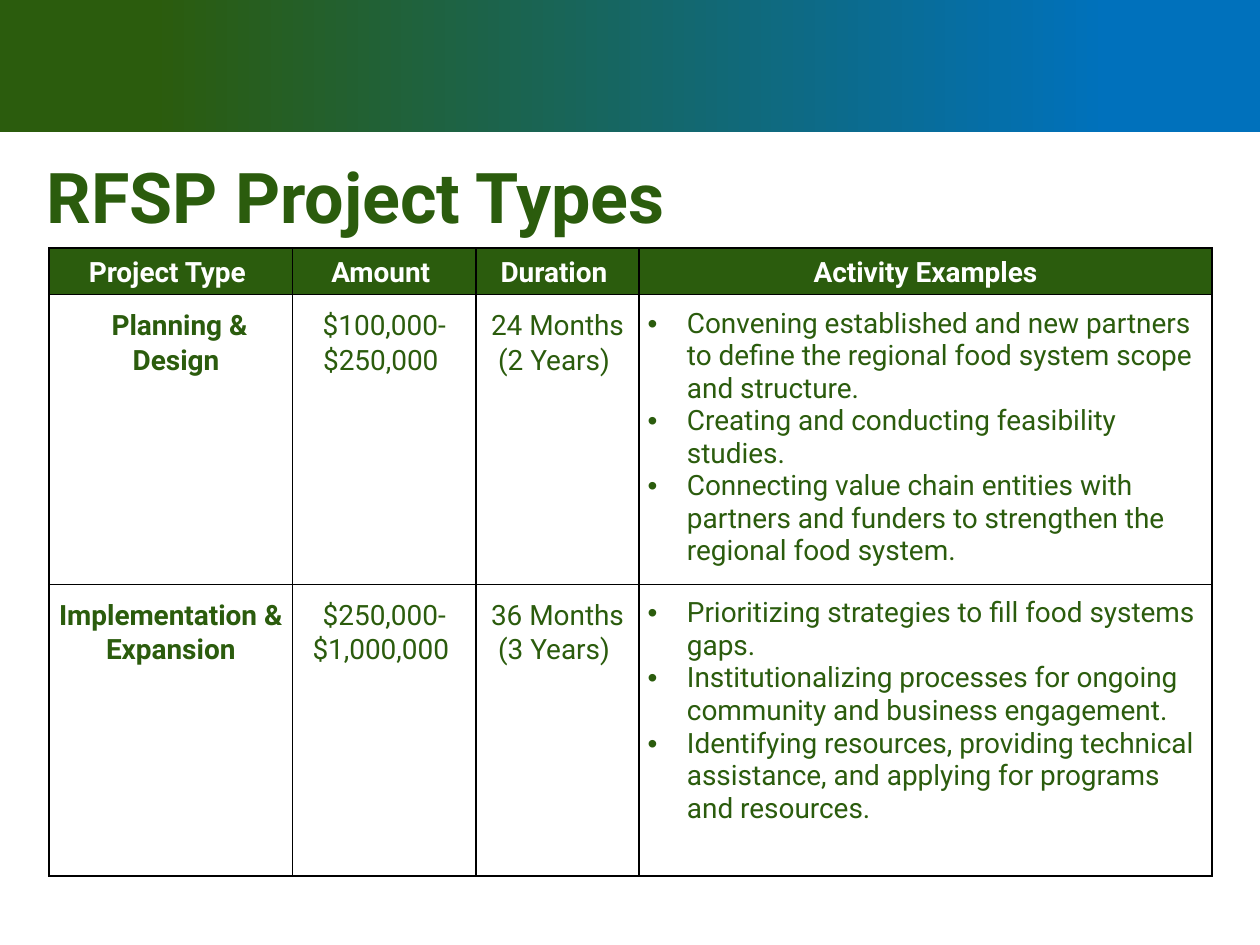
from lxml import etree
from pptx import Presentation
from pptx import util as u
from pptx.dml.color import RGBColor
from pptx.enum import shapes, text
from pptx.oxml.ns import qn

HUES = {"green": "2B5C0D", "blue": "0071BC", "white": "FFFFFF", "black": "000000"}
FACE = "Roboto"
TITLE = "RFSP Project Types"
HEADS = ["Project Type ", "Amount ", "Duration ", "Activity Examples"]
ROWS = [
    ("Planning & Design ", "$100,000-$250,000 ", "24 Months (2 Years) ", [
        "Convening established and new partners to define the regional food "
        "system scope and structure.",
        "Creating and conducting feasibility studies.",
        "Connecting value chain entities with partners and funders to "
        "strengthen the regional food system.",
    ]),
    ("Implementation & Expansion", "$250,000- $1,000,000 ", "36 Months (3 Years) ", [
        "Prioritizing strategies to fill food systems gaps.",
        "Institutionalizing processes for ongoing community and business engagement.",
        "Identifying resources, providing technical assistance, and applying "
        "for programs and resources.",
    ]),
]
WIDTHS = [139, 105, 93, 327.6]
HEIGHTS = [26.6, 165.6, 166.6]
BAND = (0, 0, 720, 75.6)
HEAD_BOX = (19.5, 84.2, 452, 55.4)
GRID = (28.1, 141.8)
HANG = 22.5
HEAD_PAD = dict.fromkeys(("left", "right", "top", "bottom"), 0)
BODY_PAD = {"left": 5, "right": 5, "top": 7.2, "bottom": 0}


def rgb(hue):
    return RGBColor.from_string(HUES[hue])


def style(font, hue, size, bold):
    look = {"name": FACE, "size": u.Pt(size), "bold": bold}
    for key, val in look.items():
        setattr(font, key, val)
    font.color.rgb = rgb(hue)


def edge(cell):
    """Draw a one-point line on all four sides; call before filling the cell."""
    props = cell._tc.get_or_add_tcPr()
    for side in ("lnL", "lnR", "lnT", "lnB"):
        line = etree.SubElement(props, qn("a:" + side), w=str(u.Pt(1)))
        fill = etree.SubElement(line, qn("a:solidFill"))
        etree.SubElement(fill, qn("a:srgbClr"), val=HUES["black"])


def indent(par, left, hang=0):
    props = par._p.get_or_add_pPr()
    props.set("marL", str(u.Pt(left)))
    props.set("indent", str(u.Pt(-hang)))
    return props


def bullet(par):
    props = indent(par, HANG, HANG)
    etree.SubElement(props, qn("a:buFont"), typeface="Arial")
    etree.SubElement(props, qn("a:buChar"), char="•")


def write(cell, body, hue, bold, pad):
    """Fill a cell with centred text, or with bullets when body is a list."""
    listed = isinstance(body, list)
    for side, gap in pad.items():
        setattr(cell, "margin_" + side, u.Pt(gap))
    frame = cell.text_frame
    for i, line in enumerate(body if listed else [body]):
        par = frame.add_paragraph() if i else frame.paragraphs[0]
        if listed:
            bullet(par)
        else:
            par.alignment = text.PP_ALIGN.CENTER
            par.line_spacing = 1.07
        run = par.add_run()
        run.text = line
        style(run.font, hue, 16, bold)


def add_band(slide):
    band = slide.shapes.add_shape(shapes.MSO_SHAPE.RECTANGLE, *map(u.Pt, BAND))
    band.shadow.inherit = False
    band.line.fill.background()
    band.fill.gradient()
    band.fill.gradient_angle = 180
    for stop, (spot, hue) in zip(band.fill.gradient_stops, [(0.12, "blue"), (0.88, "green")]):
        stop.position = spot
        stop.color.rgb = rgb(hue)


def add_title(slide):
    title = slide.shapes.title
    for key, val in zip(("left", "top", "width", "height"), HEAD_BOX):
        setattr(title, key, u.Pt(val))
    frame = title.text_frame
    frame.text = TITLE
    frame.auto_size = text.MSO_AUTO_SIZE.SHAPE_TO_FIT_TEXT
    frame.vertical_anchor = text.MSO_ANCHOR.MIDDLE
    par = frame.paragraphs[0]
    par.alignment = text.PP_ALIGN.LEFT
    style(par.runs[0].font, "green", 40, True)


def add_grid(slide):
    size = (sum(WIDTHS), sum(HEIGHTS))
    table = slide.shapes.add_table(
        len(HEIGHTS), len(WIDTHS), *map(u.Pt, GRID + size)).table
    table.first_row = table.horz_banding = False
    for col, wide in zip(table.columns, WIDTHS):
        col.width = u.Pt(wide)
    for row, high in zip(table.rows, HEIGHTS):
        row.height = u.Pt(high)
    for r, line in enumerate([HEADS] + ROWS):
        for c, body in enumerate(line):
            cell = table.cell(r, c)
            edge(cell)
            if r == 0:
                cell.fill.solid()
                cell.fill.fore_color.rgb = rgb("green")
                cell.vertical_anchor = text.MSO_ANCHOR.MIDDLE
                write(cell, body, "white", True, HEAD_PAD)
            else:
                cell.fill.background()
                write(cell, body, "green", c == 0, BODY_PAD)
    indent(table.cell(1, 0).text_frame.paragraphs[0], 10)


def main():
    deck = Presentation()
    deck.slide_width, deck.slide_height = u.Pt(720), u.Pt(540)
    slide = deck.slides.add_slide(deck.slide_layouts[5])
    add_band(slide)
    add_title(slide)
    add_grid(slide)
    deck.save("out.pptx")


if __name__ == "__main__":
    main()
